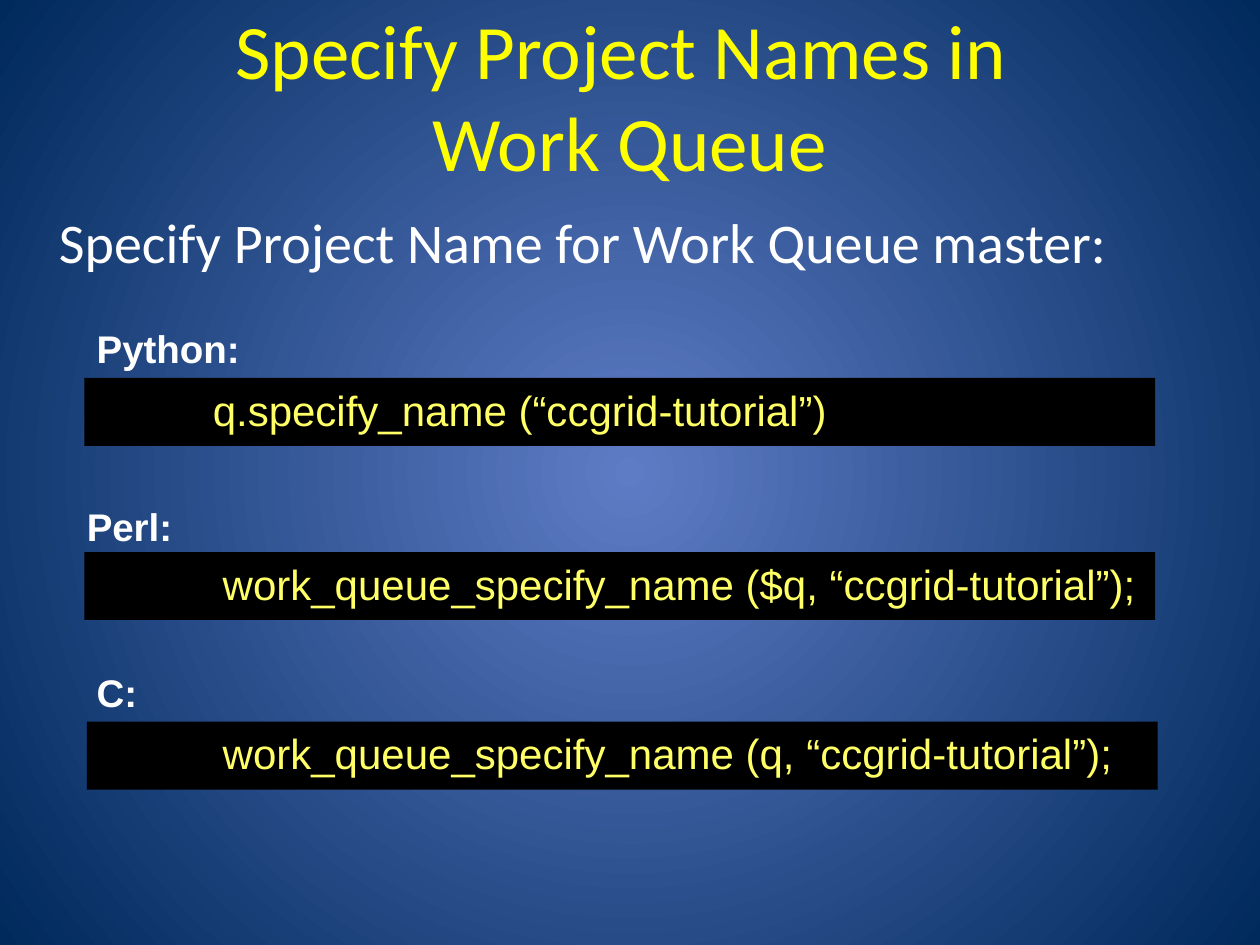
"""Build the slide on specifying project names in Work Queue."""
import pptx
import pptx.util
import pptx.enum.shapes
import pptx.enum.text
import pptx.oxml
import pptx.oxml.ns
from pptx.dml.color import RGBColor
from pptx.util import Cm

COLORS = {
    "centre": "5E7CC5",
    "edge": "00295C",
    "title": "FFFF00",
    "body": "FFFFFF",
    "code": "FFFF66",
    "bar": "000000",
}
TITLE = "Specify Project Names in \vWork Queue"
INTRO = "Specify Project Name for Work Queue master:"
EXAMPLES = [
    {"language": "Python:", "label_at": (1.7, 6.43), "bar_at": (1.7, 7.62),
     "code": "q.specify_name (“ccgrid-tutorial”)", "code_left": 4.04},
    {"language": "Perl:", "label_at": (1.5, 10.01), "bar_at": (1.7, 11.13),
     "code": "work_queue_specify_name ($q, “ccgrid-tutorial”);", "code_left": 4.24},
    {"language": "C:", "label_at": (1.7, 13.36), "bar_at": (1.75, 14.55),
     "code": "work_queue_specify_name (q, “ccgrid-tutorial”);", "code_left": 4.24},
]
BAR_SIZE = (21.59, 1.37)
LABEL_SIZE = (9.09, 1.19)
CODE_SIZE = (21.7, 1.37)


def color(name):
    return RGBColor.from_string(COLORS[name])


def paint_background(slide):
    fill = slide.background.fill
    fill.gradient()
    for stop, name in zip(fill.gradient_stops, ("centre", "edge")):
        stop.color.rgb = color(name)
    gradient = slide.background._cSld.find(".//" + pptx.oxml.ns.qn("a:gradFill"))
    gradient.remove(gradient.find(pptx.oxml.ns.qn("a:lin")))
    gradient.append(pptx.oxml.parse_xml(
        f'<a:path {pptx.oxml.ns.nsdecls("a")} path="circle">'
        '<a:fillToRect l="50000" t="50000" r="50000" b="50000"/></a:path>'))


def add_text(slide, text, *, at, size, points, ink, font="Arial", bold=False,
             align=pptx.enum.text.PP_ALIGN.LEFT, anchor=pptx.enum.text.MSO_ANCHOR.TOP):
    frame = slide.shapes.add_textbox(*map(Cm, at + size)).text_frame
    frame.word_wrap = True
    frame.vertical_anchor = anchor
    frame.text = text
    paragraph = frame.paragraphs[0]
    paragraph.alignment = align
    for run in paragraph.runs:
        run.font.name = font
        run.font.size = pptx.util.Pt(points)
        run.font.bold = bold
        run.font.color.rgb = color(ink)


def add_bar(slide, at):
    bar = slide.shapes.add_shape(
        pptx.enum.shapes.MSO_SHAPE.RECTANGLE, *map(Cm, at + BAR_SIZE))
    bar.shadow.inherit = False
    bar.fill.solid()
    bar.fill.fore_color.rgb = color("bar")
    bar.line.fill.background()


def main():
    deck = pptx.Presentation()
    deck.slide_width, deck.slide_height = Cm(25.4), Cm(19.05)
    slide = deck.slides.add_slide(deck.slide_layouts[6])
    paint_background(slide)
    add_text(slide, TITLE, at=(1.27, 0.43), size=(22.86, 2.97), points=44,
             ink="title", font="Calibri", align=pptx.enum.text.PP_ALIGN.CENTER,
             anchor=pptx.enum.text.MSO_ANCHOR.MIDDLE)
    add_text(slide, INTRO, at=(0.94, 4.05), size=(24.03, 1.8), points=32,
             ink="body", font="Calibri")
    for example in EXAMPLES:
        add_bar(slide, example["bar_at"])
        add_text(slide, example["code"], at=(example["code_left"], example["bar_at"][1]),
                 size=CODE_SIZE, points=24, ink="code")
        add_text(slide, example["language"], at=example["label_at"],
                 size=LABEL_SIZE, points=22, ink="body", bold=True)
    deck.save("out.pptx")


if __name__ == "__main__":
    main()
